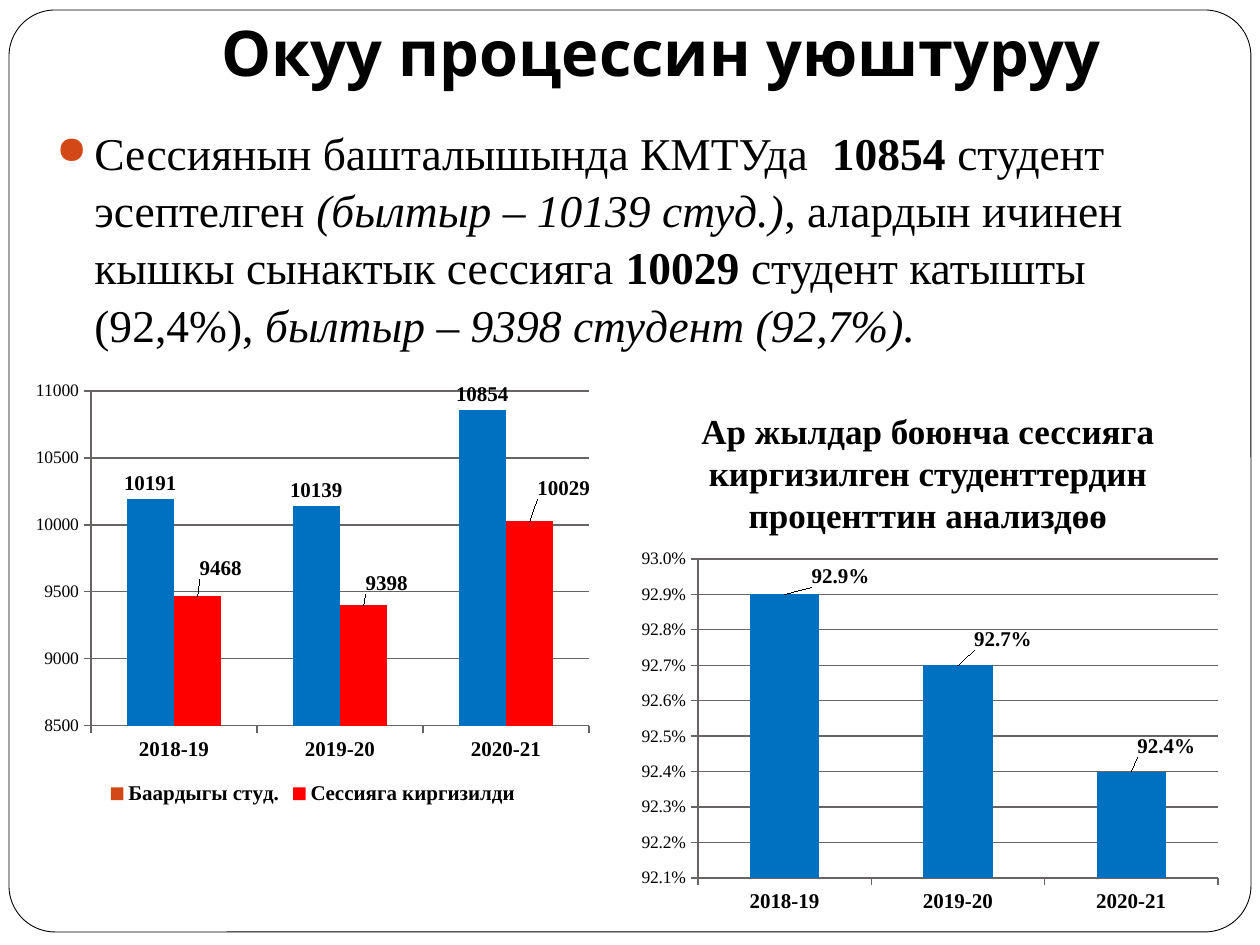
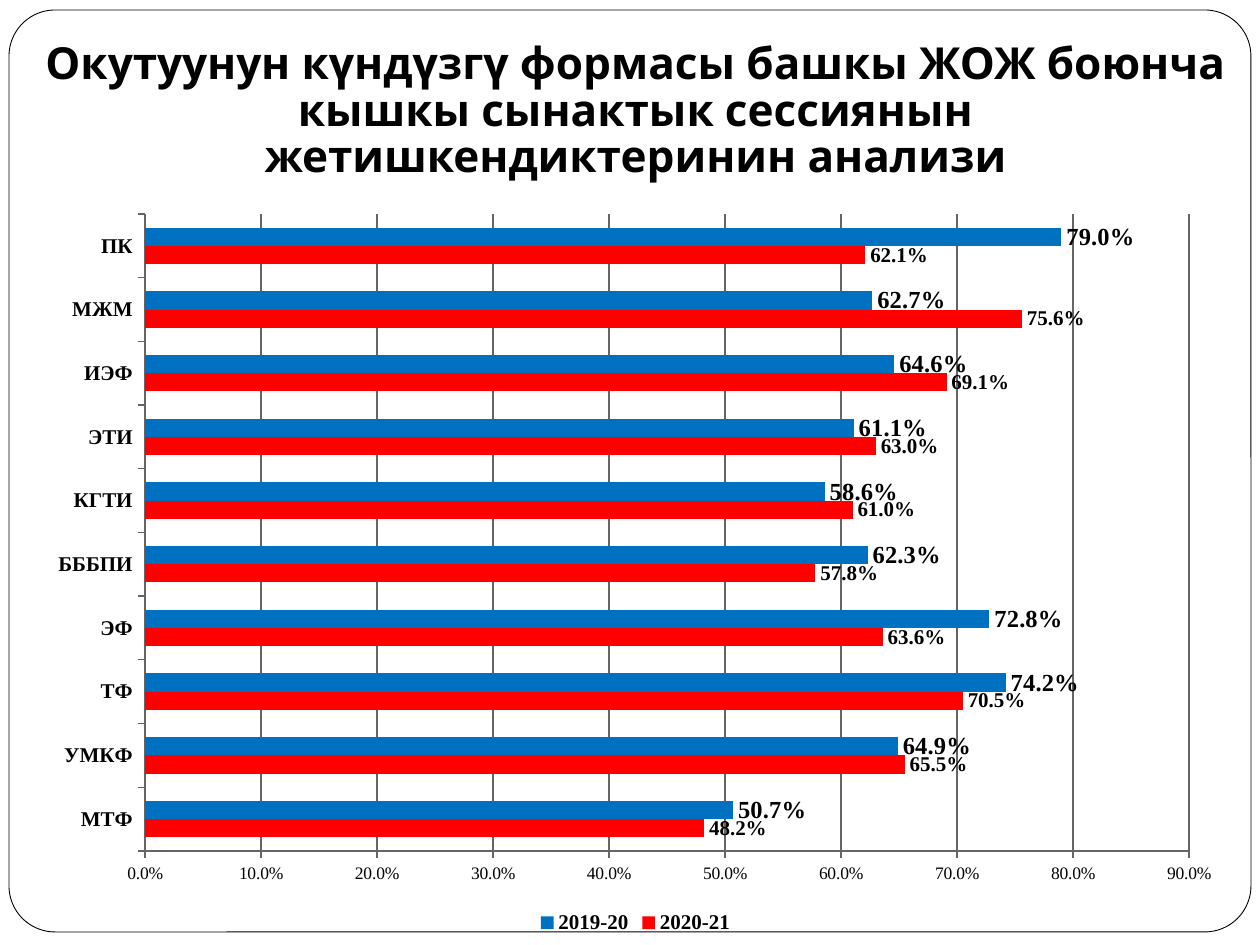
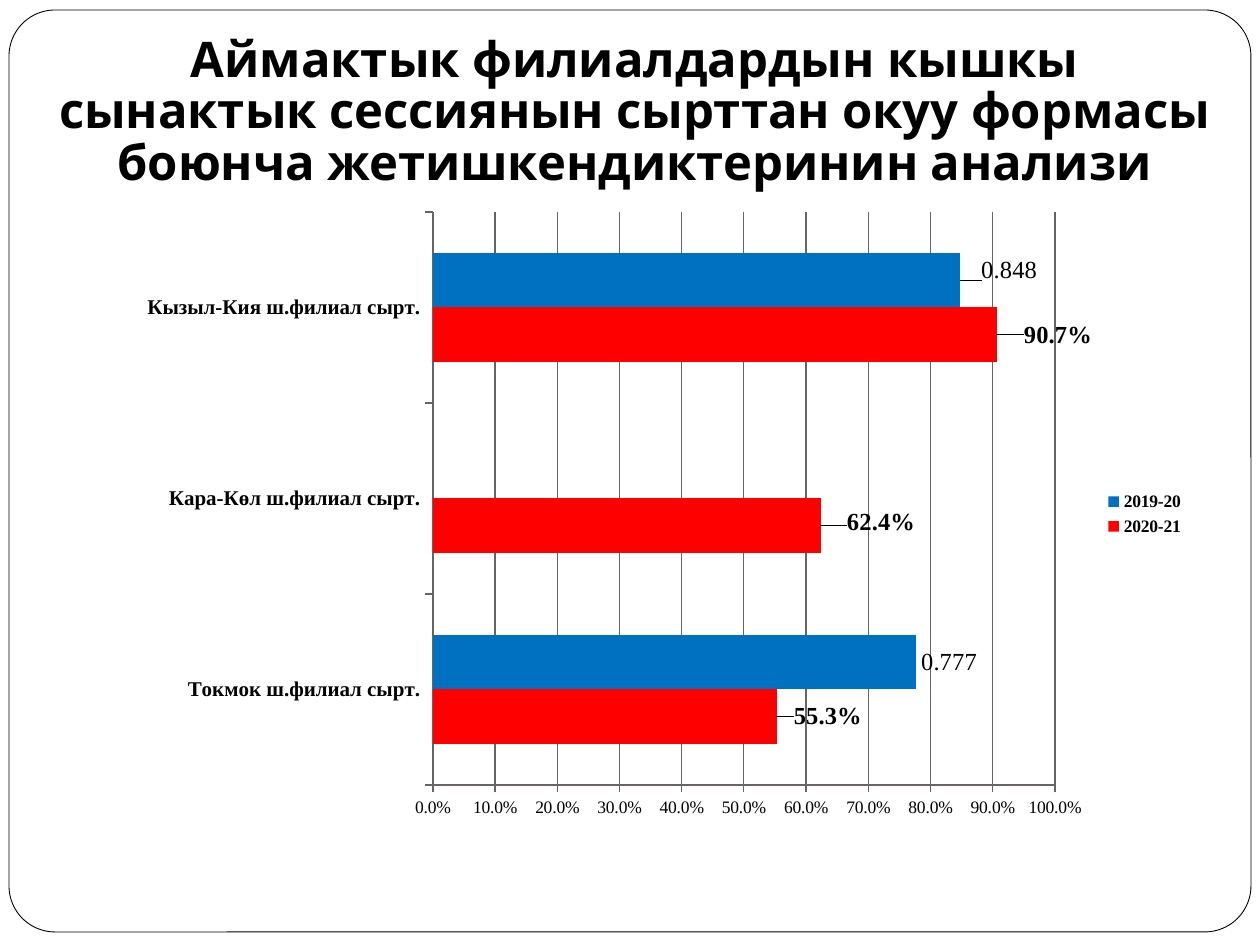
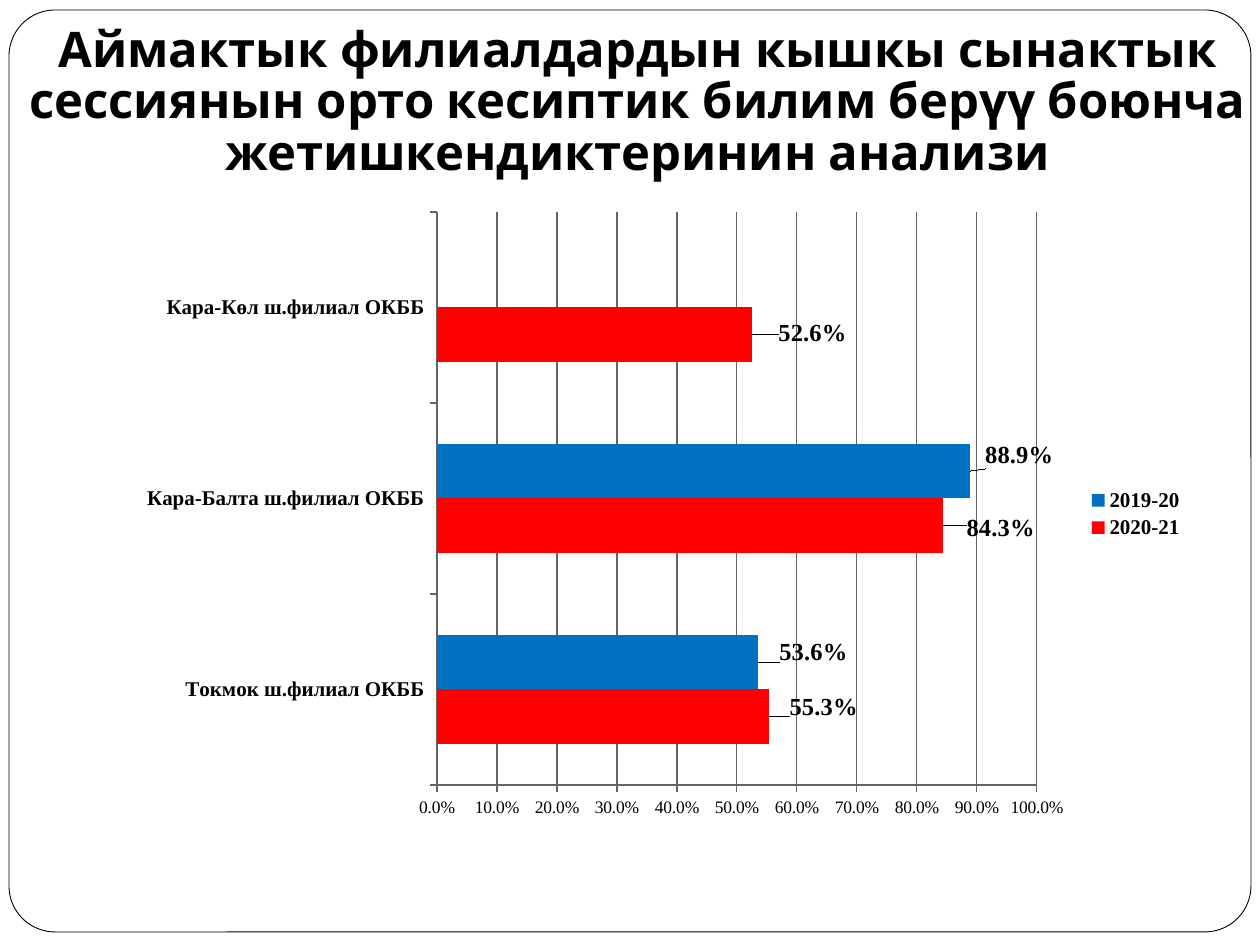
from lxml import etree
from pptx import Presentation
from pptx import util as u
from pptx.chart.data import CategoryChartData
from pptx.dml.color import RGBColor
from pptx.enum import chart as ch, shapes, text
from pptx.oxml.ns import qn

PX = 914400 / 126
COLORS = {"ink": "000000", "paper": "FFFFFF", "blue": "0070C0", "red": "FF0000",
          "accent": "D34817", "grid": "696464"}
SERIF, HEADING = "Times New Roman", "Karla"
PERCENT = "0.0%"
YEARS = ("2018-19", "2019-20", "2020-21")


def px(*lengths):
    return [u.Emu(round(n * PX)) for n in lengths]


def rgb(name):
    return RGBColor.from_string(COLORS[name])


def set_font(font, size, bold=False, face=SERIF, italic=False):
    font.name, font.size, font.bold, font.italic = face, u.Pt(size), bold, italic
    font.color.rgb = rgb("ink")


def add_text(slide, box, runs, size, face=SERIF, bold=False, center=True,
             anchor=text.MSO_ANCHOR.TOP, spacing=1.0, bottom=6):
    """Runs are (wording, style) pairs; a style holds b for bold, i for italic."""
    frame = slide.shapes.add_textbox(*px(*box)).text_frame
    frame.word_wrap, frame.vertical_anchor = True, anchor
    frame.margin_bottom = px(bottom)[0]
    paragraph = frame.paragraphs[0]
    paragraph.alignment = text.PP_ALIGN.CENTER if center else text.PP_ALIGN.LEFT
    paragraph.line_spacing = spacing
    for wording, style in runs:
        run = paragraph.add_run()
        run.text = wording
        set_font(run.font, size, bold or "b" in style, face, "i" in style)
    return paragraph


def add_bullet(paragraph, indent):
    props = paragraph._p.get_or_add_pPr()
    props.set("marL", str(px(indent)[0]))
    props.set("indent", str(px(-indent)[0]))
    color = etree.SubElement(props, qn("a:buClr"))
    etree.SubElement(color, qn("a:srgbClr"), val=COLORS["accent"])
    etree.SubElement(props, qn("a:buSzPct"), val="85000")
    etree.SubElement(props, qn("a:buChar"), char="●")


def framed_slide(deck, title, title_box, size):
    slide = deck.slides.add_slide(deck.slide_layouts[6])
    frame = slide.shapes.add_shape(shapes.MSO_SHAPE.ROUNDED_RECTANGLE, *px(9, 10, 1242, 922))
    frame.adjustments[0] = 0.05
    frame.shadow.inherit = False
    frame.fill.solid()
    frame.fill.fore_color.rgb = rgb("paper")
    frame.line.color.rgb = rgb("ink")
    frame.line.width = u.Pt(0.5)
    add_text(slide, title_box, [(title, "")], size, HEADING, bold=True,
             anchor=text.MSO_ANCHOR.BOTTOM, spacing=0.88, bottom=13)
    return slide


def manual_layout(**values):
    layout = etree.Element(qn("c:layout"))
    manual = etree.SubElement(layout, qn("c:manualLayout"))
    for tag, value in values.items():
        etree.SubElement(manual, qn(f"c:{tag}"), val=str(value))
    return layout


def place_plot(chart, box, plot):
    """Fix the inner plot area; plot is relative to the chart's box."""
    left, top, width, height = plot
    area = chart._chartSpace.chart.plotArea
    for old in area.findall(qn("c:layout")):
        area.remove(old)
    area.insert(0, manual_layout(
        layoutTarget="inner", xMode="edge", yMode="edge",
        x=round(left / box[2], 4), y=round(top / box[3], 4),
        w=round(width / box[2], 4), h=round(height / box[3], 4)))


def label_series(series, box, size, bold, fmt, shifts):
    """Shifts maps a point to its label's move in px from the bar's end."""
    labels = series.data_labels
    labels.show_value = True
    labels.position = ch.XL_LABEL_POSITION.OUTSIDE_END
    labels.number_format, labels.number_format_is_linked = fmt, False
    set_font(labels.font, size, bold)
    for index, (dx, dy) in shifts.items():
        label = series.points[index].data_label
        set_font(label.font, size, bold)
        label.position = ch.XL_LABEL_POSITION.OUTSIDE_END
        entry = labels._element.find(f"{qn('c:dLbl')}[{qn('c:idx')}]")
        entry = next(e for e in labels._element.findall(qn("c:dLbl"))
                     if e.find(qn("c:idx")).get("val") == str(index))
        entry.find(qn("c:idx")).addnext(
            manual_layout(x=round(dx / box[2], 4), y=round(dy / box[3], 4)))


def style_axes(chart, scale, fmt):
    years, amounts = chart.category_axis, chart.value_axis
    amounts.minimum_scale, amounts.maximum_scale, amounts.major_unit = scale
    amounts.has_major_gridlines = True
    for line in (years.format.line, amounts.format.line, amounts.major_gridlines.format.line):
        line.color.rgb = rgb("grid")
        line.width = u.Pt(0.75)
    for axis, size, bold in ((years, 12, True), (amounts, 10, False)):
        axis.major_tick_mark = ch.XL_TICK_MARK.OUTSIDE
        axis.minor_tick_mark = ch.XL_TICK_MARK.NONE
        set_font(axis.tick_labels.font, size, bold)
    amounts.tick_labels.number_format = fmt
    amounts.tick_labels.number_format_is_linked = False


def add_bars(slide, kind, box, plot, categories, rows, scale, fmt=PERCENT,
             legend=None, legend_size=12):
    """Each row is a dict with name, values and color, and how its labels look."""
    data = CategoryChartData()
    data.categories = categories
    for row in rows:
        data.add_series(row["name"], row["values"], row.get("fmt", fmt))
    chart = slide.shapes.add_chart(kind, *px(*box), data).chart
    chart.has_title = False
    set_font(chart.font, 10)
    style_axes(chart, scale, fmt)
    place_plot(chart, box, plot)
    chart.has_legend = legend is not None
    if legend is not None:
        chart.legend.position = legend
        chart.legend.include_in_layout = False
        set_font(chart.legend.font, legend_size, True)
    bars = chart.plots[0]
    bars.gap_width, bars.vary_by_categories = 150, False
    for series, row in zip(bars.series, rows):
        series.invert_if_negative = False
        series.format.fill.solid()
        series.format.fill.fore_color.rgb = rgb(row["color"])
        if "point_color" in row:
            for index in range(len(categories)):
                fill = series.points[index].format.fill
                fill.solid()
                fill.fore_color.rgb = rgb(row["point_color"])
        label_series(series, box, row.get("size", 14), row.get("bold", True),
                     row.get("fmt", fmt), row.get("shifts", {}))


def year_rows(current, previous):
    """The red and blue rows shared by the bar slides."""
    return [{"name": "2020-21", "color": "red", **current},
            {"name": "2019-20", "color": "blue", **previous}]


def organisation_slide(deck):
    slide = framed_slide(deck, "Окуу процессин уюштуруу", (126, 6, 1071, 97), 36)
    summary = add_text(slide, (44, 116, 1197, 679), [
        ("Сессиянын башталышында КМТУда  ", ""), ("10854 ", "b"),
        ("студент эсептелген ", ""), ("(былтыр – 10139 студ.)", "i"),
        (", алардын ичинен кышкы сынактык сессияга ", ""), ("10029", "b"),
        (" студент катышты  (92,4%), ", ""),
        ("былтыр – 9398 студент (92,7%).", "i")], 26, center=False, spacing=1.05)
    summary.space_before = u.Pt(5.8)
    add_bullet(summary, 38)
    columns = ch.XL_CHART_TYPE.COLUMN_CLUSTERED
    add_bars(slide, columns, (25, 373, 576, 437), (66, 18, 498, 335), YEARS, [
        {"name": "Баардыгы студ.", "values": (10191, 10139, 10854), "size": 12,
         "color": "accent", "point_color": "blue"},
        {"name": "Сессияга киргизилди", "values": (9468, 9398, 10029), "size": 12,
         "color": "red", "shifts": {0: (23, -12), 1: (23, -6), 2: (34, -17)}},
    ], (8500, 11000, 500), "General", ch.XL_LEGEND_POSITION.BOTTOM)
    add_bars(slide, columns, (630, 542, 600, 378), (68, 17, 520, 319), YEARS, [
        {"name": "Series 1", "values": (0.929, 0.927, 0.924), "size": 12,
         "color": "blue", "shifts": {0: (56, -2), 1: (45, -10), 2: (35, -9)}},
    ], (0.921, 0.93, 0.001))
    add_text(slide, (650, 403, 556, 140), [
        ("Ар жылдар боюнча сессияга киргизилген студенттердин проценттин анализдөө", "")],
        20, bold=True)


def faculties_slide(deck):
    slide = framed_slide(
        deck, "Окутуунун күндүзгү формасы башкы ЖОЖ боюнча кышкы сынактык "
        "сессиянын жетишкендиктеринин анализи", (25, 38, 1221, 157), 25.2)
    faculties = ("МТФ", "УМКФ", "ТФ", "ЭФ", "БББПИ", "КГТИ", "ЭТИ", "ИЭФ", "МЖМ", "ПК")
    rows = year_rows(
        {"values": (0.482, 0.655, 0.705, 0.636, 0.578, 0.61, 0.63, 0.691, 0.756, 0.621),
         "size": 12},
        {"values": (0.507, 0.649, 0.742, 0.728, 0.623, 0.586, 0.611, 0.646, 0.627, 0.79)})
    add_bars(slide, ch.XL_CHART_TYPE.BAR_CLUSTERED, (35, 199, 1201, 740),
             (110, 15, 1044, 637), faculties, rows, (0, 0.9, 0.1),
             legend=ch.XL_LEGEND_POSITION.BOTTOM)


def branches_slide(deck, title, title_box, branches, rows, plot_left, plot_width, legend_size):
    slide = framed_slide(deck, title, title_box, 28)
    add_bars(slide, ch.XL_CHART_TYPE.BAR_CLUSTERED, (126, 199, 1071, 630),
             (plot_left, 13, plot_width, 573), branches, rows, (0, 1, 0.1),
             legend=ch.XL_LEGEND_POSITION.RIGHT, legend_size=legend_size)


def main():
    deck = Presentation()
    deck.slide_width, deck.slide_height = px(1260, 945)
    organisation_slide(deck)
    faculties_slide(deck)
    branches_slide(
        deck, "Аймактык филиалдардын кышкы сынактык сессиянын сырттан окуу формасы "
        "боюнча жетишкендиктеринин анализи", (44, 47, 1181, 157),
        [f"{town} ш.филиал сырт." for town in ("Токмок", "Кара-Көл", "Кызыл-Кия")],
        year_rows({"values": (0.553, 0.624, 0.907),
                   "shifts": {0: (12, -1), 1: (21, -4), 2: (22, 0)}},
                  {"values": (0.777, None, 0.848), "fmt": "General", "bold": False,
                   "shifts": {2: (16, -10)}, "bold_points": (2,)}),
        307, 622, 10)
    branches_slide(
        deck, "Аймактык филиалдардын кышкы сынактык сессиянын орто кесиптик билим берүү "
        "боюнча жетишкендиктеринин анализи", (15, 37, 1245, 157),
        [f"{town} ш.филиал ОКББ" for town in ("Токмок", "Кара-Балта", "Кара-Көл")],
        year_rows({"values": (0.553, 0.843, 0.526),
                   "shifts": {0: (16, -10), 1: (19, 2), 2: (21, -2)}},
                  {"values": (0.536, 0.889, None),
                   "shifts": {0: (16, -10), 1: (10, -16)}}),
        311, 600, 12)
    deck.save("out.pptx")


if __name__ == "__main__":
    main()
